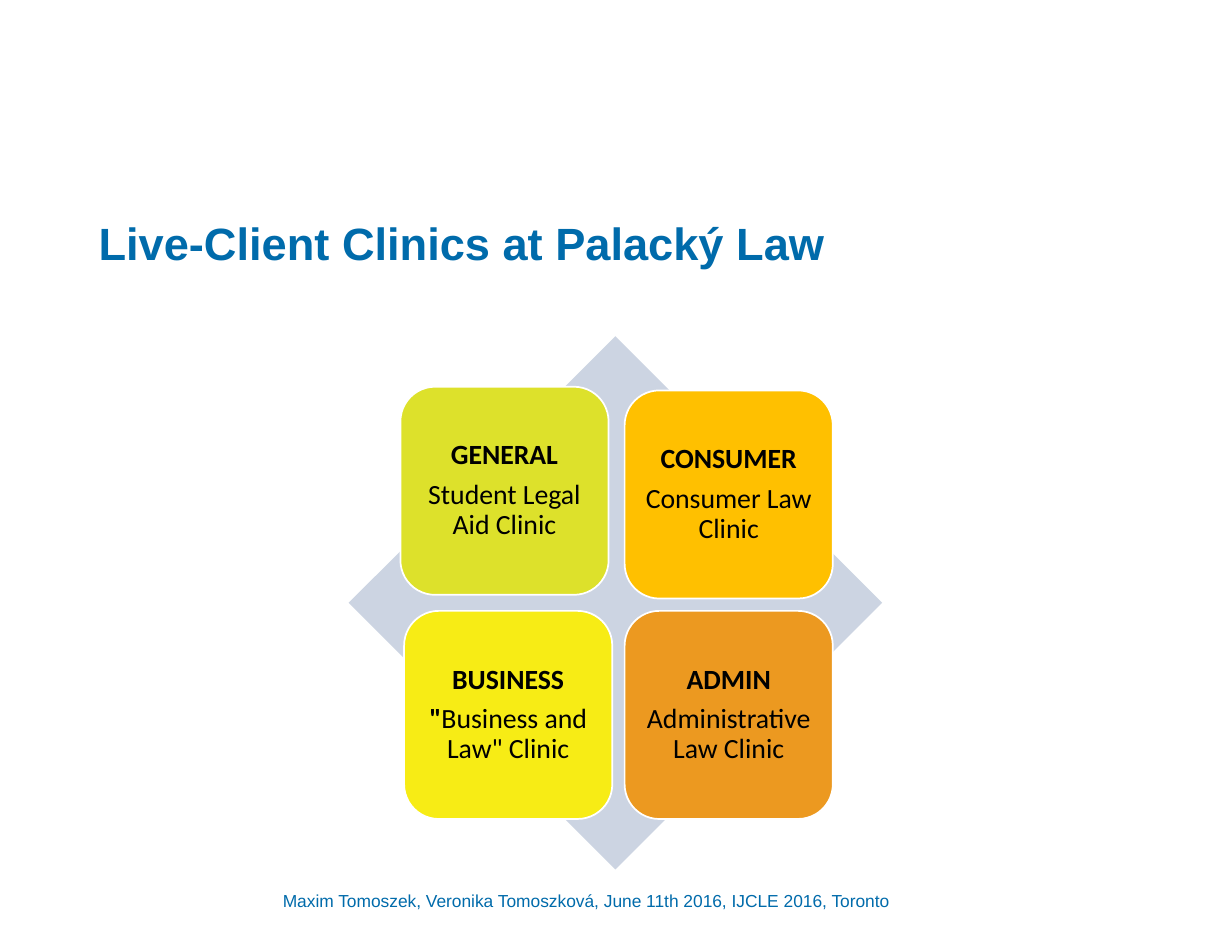
from dataclasses import dataclass

from pptx import Presentation
from pptx.dml.color import RGBColor as Rgb
from pptx.enum.shapes import MSO_SHAPE as Shape
from pptx.enum.text import MSO_ANCHOR as Anchor, MSO_AUTO_SIZE as Auto, PP_ALIGN as Align
from pptx.util import Pt

SCALE = 9000


@dataclass(frozen=True)
class Theme:
    """Colours, fonts and type sizes of the slide."""
    blue: str = "006BAB"
    ink: str = "000000"
    edge: str = "FFFFFF"
    back: str = "CCD4E2"
    lime: str = "DDE12B"
    gold: str = "FFC000"
    lemon: str = "F7EC15"
    amber: str = "EC9920"
    sans: str = "Arial"
    label: str = "Calibri"
    head: float = 26
    body: float = 16
    foot: float = 10
    gap: float = 5.6


THEME = Theme()
SIDE = 169
TILES = [
    (325, 314, THEME.lime, "GENERAL", [("Student Legal Aid Clinic", False)]),
    (507, 317, THEME.gold, "CONSUMER", [("Consumer Law Clinic", False)]),
    (507, 496, THEME.amber, "ADMIN", [("Administrative Law Clinic", False)]),
    (328, 496, THEME.lemon, "BUSINESS", [('"', True), ('Business and Law" Clinic', False)]),
]


def px(*vals):
    """Turn px lengths into EMU."""
    return [val * SCALE for val in vals]


def set_frame(frame, inset, anchor):
    """Set wrapping, insets and anchor of a text frame."""
    frame.word_wrap = True
    frame.auto_size = Auto.NONE
    frame.vertical_anchor = anchor
    edge = inset * SCALE
    frame.margin_left = frame.margin_right = edge
    frame.margin_top = frame.margin_bottom = edge


def add_run(para, text, face, size, tint, bold=False):
    """Add one formatted run to a paragraph."""
    run = para.add_run()
    run.text = text
    font = run.font
    font.name, font.size, font.bold = face, Pt(size), bold
    font.color.rgb = Rgb.from_string(tint)


def add_title(slide, text):
    """Place and fill the title."""
    title = slide.shapes.title
    title.left, title.top, title.width, title.height = px(80, 180, 840, 83)
    set_frame(title.text_frame, 0, Anchor.TOP)
    para = title.text_frame.paragraphs[0]
    para.alignment, para.line_spacing = Align.LEFT, 0.9
    add_run(para, text, THEME.sans, THEME.head, THEME.blue, True)


def add_foot(slide, text):
    """Add the centred credit line at the bottom."""
    box = slide.shapes.add_textbox(*px(80, 716, 791, 24))
    set_frame(box.text_frame, 0, Anchor.BOTTOM)
    para = box.text_frame.paragraphs[0]
    para.alignment = Align.CENTER
    add_run(para, text, THEME.sans, THEME.foot, THEME.blue)


def add_form(group, kind, area, tint):
    """Add a flat filled shape without outline."""
    form = group.shapes.add_shape(kind, *px(*area))
    form.shadow.inherit = False
    form.fill.solid()
    form.fill.fore_color.rgb = Rgb.from_string(tint)
    form.line.fill.background()
    return form


def add_tile(group, left, top, tint, name, parts):
    """Add a rounded tile with a bold name and a clinic."""
    tile = add_form(group, Shape.ROUNDED_RECTANGLE, (left, top, SIDE, SIDE), tint)
    tile.line.color.rgb = Rgb.from_string(THEME.edge)
    tile.line.width = Pt(1)
    frame = tile.text_frame
    set_frame(frame, 7, Anchor.MIDDLE)
    head, body = frame.paragraphs[0], frame.add_paragraph()
    head.space_after = Pt(THEME.gap)
    for para, runs in ((head, [(name, True)]), (body, parts)):
        para.alignment, para.line_spacing = Align.CENTER, 0.9
        for text, bold in runs:
            add_run(para, text, THEME.label, THEME.body, THEME.ink, bold)


def main():
    """Build and save the slide."""
    deck = Presentation()
    deck.slide_width, deck.slide_height = px(1000, 760)
    slide = deck.slides.add_slide(deck.slide_layouts[5])
    add_title(slide, "Live-Client Clinics at Palacký Law")
    add_foot(slide, "Maxim Tomoszek, Veronika Tomoszková, June 11th 2016, IJCLE 2016, Toronto")
    group = slide.shapes.add_group_shape()
    add_form(group, Shape.DIAMOND, (283, 273, 433, 433), THEME.back)
    for tile in TILES:
        add_tile(group, *tile)
    deck.save("out.pptx")


if __name__ == "__main__":
    main()
